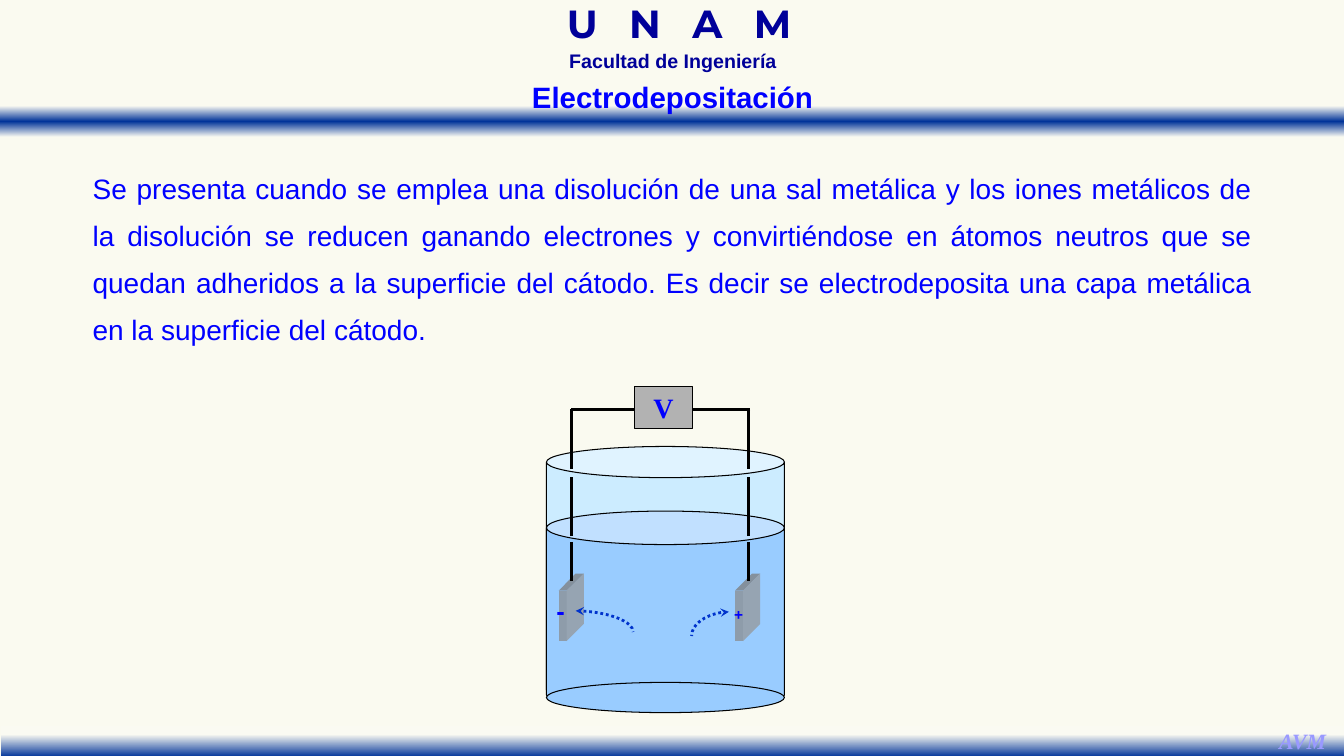
import pptx
import pptx.util
import pptx.dml.color
import pptx.enum.dml
import pptx.enum.shapes
import pptx.enum.text
import pptx.oxml
import pptx.oxml.ns
from lxml import etree

Inches = pptx.util.Inches
Pt = pptx.util.Pt
RGBColor = pptx.dml.color.RGBColor
SHAPE = pptx.enum.shapes.MSO_SHAPE
LINE = pptx.enum.shapes.MSO_CONNECTOR
ALIGN = pptx.enum.text.PP_ALIGN
ANCHOR = pptx.enum.text.MSO_ANCHOR
AUTO = pptx.enum.text.MSO_AUTO_SIZE
qn = pptx.oxml.ns.qn

CREAM = RGBColor(0xFA, 0xFA, 0xF0)
BAND_LIGHT = RGBColor(0xFA, 0xFA, 0xF2)
BAND_DARK = RGBColor(0x00, 0x33, 0x99)
NAVY = RGBColor(0x00, 0x00, 0x99)
BLUE = RGBColor(0x00, 0x00, 0xFF)
LILAC = RGBColor(0x99, 0x99, 0xFF)
ION_BLUE = RGBColor(0x00, 0x33, 0xCC)
GLASS = RGBColor(0xCC, 0xEC, 0xFF)
LIQUID = RGBColor(0x99, 0xCC, 0xFF)
GREY = RGBColor(0xB2, 0xB2, 0xB2)
PLATE_FRONT = RGBColor(0x8E, 0x9C, 0xAA)
PLATE_TOP = RGBColor(0x84, 0x90, 0x9C)
PLATE_SIDE = RGBColor(0x96, 0xA4, 0xB2)
BLACK = RGBColor(0x00, 0x00, 0x00)

BODY = ("Se presenta cuando se emplea una disolución de una sal metálica y los iones "
        "metálicos de la disolución se reducen ganando electrones y convirtiéndose en "
        "átomos neutros que se quedan adheridos a la superficie del cátodo. Es decir se "
        "electrodeposita una capa metálica en la superficie del cátodo.")


def write(s, text, size, color, font="Arial", bold=True, italic=False,
          align=ALIGN.CENTER, spacing=None, wrap=False):
    tf = s.text_frame
    tf.text = text
    tf.word_wrap = wrap
    p = tf.paragraphs[0]
    p.alignment = align
    if spacing:
        p.line_spacing = spacing
    r = p.runs[0]
    r.font.name = font
    r.font.size = Pt(size)
    r.font.bold = bold
    r.font.italic = italic
    r.font.color.rgb = color
    return r


def add_text(slide, box, text, size, color, **style):
    s = slide.shapes.add_textbox(*map(Inches, box))
    r = write(s, text, size, color, **style)
    s.text_frame.auto_size = AUTO.SHAPE_TO_FIT_TEXT
    return s, r


def add_solid(slide, kind, box, color, adj=None):
    s = slide.shapes.add_shape(kind, *map(Inches, box))
    s.shadow.inherit = False
    s.fill.solid()
    s.fill.fore_color.rgb = color
    s.line.color.rgb = BLACK
    s.line.width = Pt(0.75)
    if adj is not None:
        s.adjustments[0] = adj
    return s


def add_band(slide, box, stops):
    s = slide.shapes.add_shape(SHAPE.RECTANGLE, *map(Inches, box))
    s.shadow.inherit = False
    s.line.fill.background()
    s.fill.gradient()
    s.fill.gradient_angle = 270
    gs_list = s.fill._xPr.find(qn("a:gradFill")).find(qn("a:gsLst"))
    for gs in list(gs_list):
        gs_list.remove(gs)
    for pos, color in stops:
        gs = etree.SubElement(gs_list, qn("a:gs"), pos=str(pos * 1000))
        etree.SubElement(gs, qn("a:srgbClr"), val=str(color))


def add_line(slide, start, end, color=BLACK, kind=LINE.STRAIGHT):
    s = slide.shapes.add_connector(kind, *map(Inches, start + end))
    s.line.color.rgb = color
    s.line.width = Pt(2)
    etree.SubElement(s._element.spPr, qn("a:effectLst"))
    return s


def add_ion_path(slide, tip, origin):
    s = add_line(slide, tip, origin, ION_BLUE, LINE.CURVE)
    s._element.spPr.find(qn("a:prstGeom")).set("prst", "curvedConnector2")
    s.line.dash_style = pptx.enum.dml.MSO_LINE.ROUND_DOT
    etree.SubElement(s.line._get_or_add_ln(), qn("a:headEnd"), type="stealth")


def add_face(slide, points, color):
    points = [(Inches(x), Inches(y)) for x, y in points]
    builder = slide.shapes.build_freeform(*points[0], scale=1.0)
    builder.add_line_segments(points[1:], close=True)
    s = builder.convert_to_shape()
    s.shadow.inherit = False
    s.fill.solid()
    s.fill.fore_color.rgb = color
    s.line.fill.background()


def add_electrode(slide, x):
    left, right, top, bottom, depth = x - 0.13, x - 0.05, 5.86, 6.36, 0.17
    back_top, back_right = top - depth, right + depth
    add_face(slide, [(left, top), (right, top), (right, bottom), (left, bottom)], PLATE_FRONT)
    add_face(slide, [(left, top), (left + depth, back_top), (back_right, back_top),
                     (right, top)], PLATE_TOP)
    add_face(slide, [(right, top), (back_right, back_top), (back_right, bottom - depth),
                     (right, bottom)], PLATE_SIDE)
    for y1, y2 in [(5.76, 5.38), (5.32, 4.73), (4.65, 4.06)]:
        add_line(slide, (x, y1), (x, y2))


def add_frame(slide):
    slide.background.fill.solid()
    slide.background.fill.fore_color.rgb = CREAM
    add_band(slide, (-0.01, 1.05, 13.35, 0.31),
             [(0, BAND_LIGHT), (50, BAND_DARK), (100, BAND_LIGHT)])
    s, r = add_text(slide, (4.78, 0.07, 3.91, 0.45), "U N A M", 28, NAVY,
                    font="Montserrat", spacing=0.7, wrap=True)
    r.font._element.set("spc", "730")
    add_text(slide, (4.89, 0.5, 3.57, 0.27), "Facultad de Ingeniería", 14, NAVY,
             spacing=0.7, wrap=True)
    add_band(slide, (0.01, 7.2, 13.35, 0.31), [(28, BAND_LIGHT), (100, BAND_DARK)])
    add_text(slide, (12.58, 7.17, 0.68, 0.37), "AVM", 15.6, LILAC,
             font="Times New Roman", italic=True)


def add_cell(slide):
    add_solid(slide, SHAPE.CAN, (5.42, 4.43, 2.36, 2.57), GLASS, 0.131)
    add_solid(slide, SHAPE.CAN, (5.42, 5.07, 2.36, 1.99), LIQUID, 0.167)
    add_solid(slide, SHAPE.OVAL, (5.42, 6.77, 2.36, 0.3), LIQUID)
    for x in (5.67, 7.42):
        add_electrode(slide, x)
    add_line(slide, (7.44, 4.06), (5.66, 4.06))
    source = add_solid(slide, SHAPE.RECTANGLE, (6.29, 3.83, 0.58, 0.42), GREY)
    write(source, "V", 20, BLUE, font="Times New Roman")
    source.text_frame.vertical_anchor = ANCHOR.MIDDLE
    add_text(slide, (7.18, 5.95, 0.29, 0.28), "+", 11, BLUE)
    minus, r = add_text(slide, (5.42, 5.86, 0.28, 0.4), "-", 18, BLUE)
    minus.rotation = 0.4
    add_ion_path(slide, (5.71, 6.06), (6.28, 6.27))
    add_ion_path(slide, (7.23, 6.07), (6.86, 6.31))


def main():
    prs = pptx.Presentation()
    prs.slide_width = Inches(13.33)
    prs.slide_height = Inches(7.5)
    slide = prs.slides.add_slide(prs.slide_layouts[6])
    add_frame(slide)
    add_text(slide, (5.16, 0.74, 3.02, 0.45), "Electrodepositación", 21, BLUE)
    add_text(slide, (0.82, 1.52, 11.7, 1.99), BODY, 20, BLUE, bold=False,
             align=ALIGN.JUSTIFY, spacing=1.4, wrap=True)
    add_cell(slide)
    prs.save("out.pptx")


if __name__ == "__main__":
    main()
